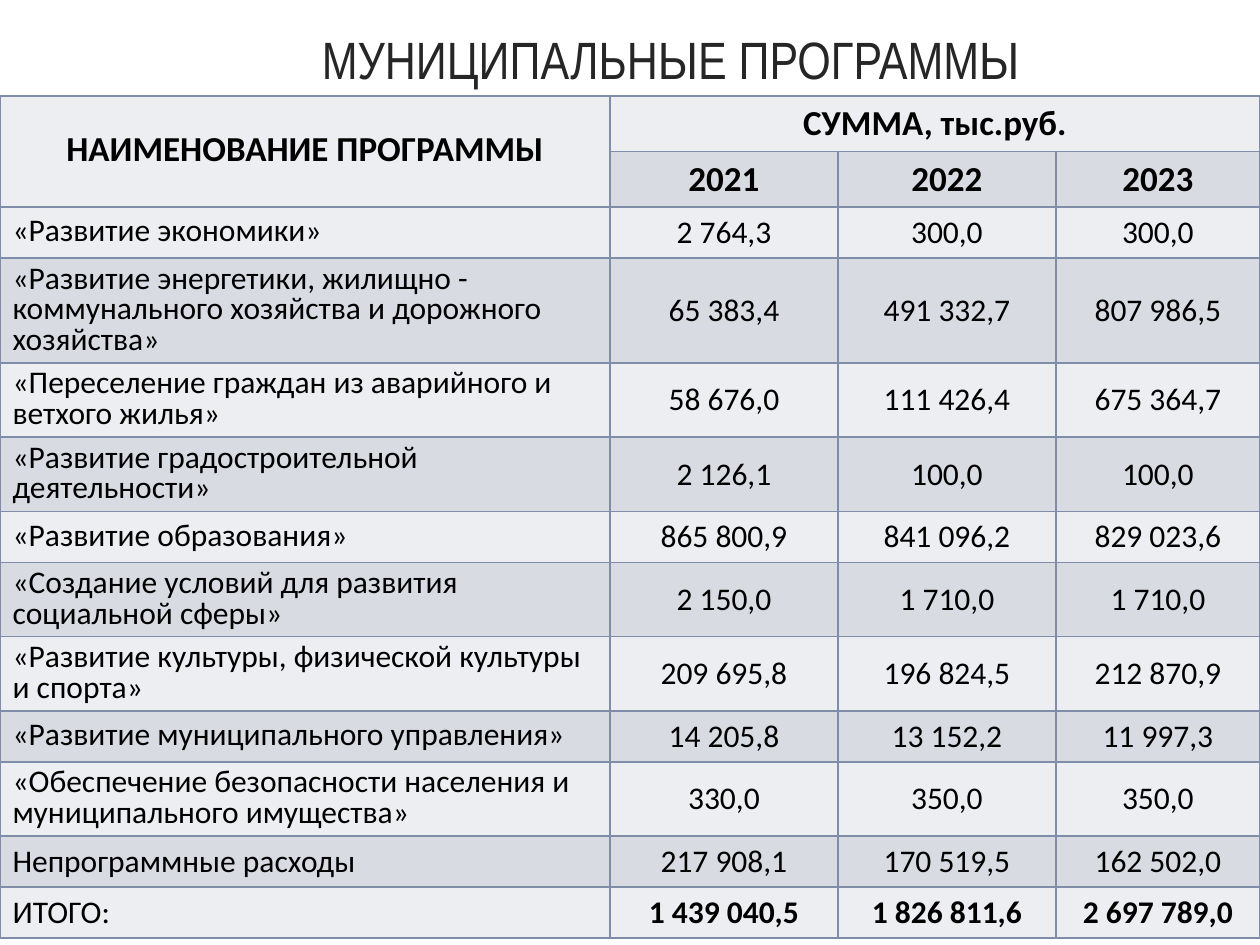
from lxml import etree
from pptx import Presentation
from pptx.dml.color import RGBColor
from pptx.enum.text import MSO_ANCHOR, MSO_AUTO_SIZE, PP_ALIGN
from pptx.oxml.ns import qn
from pptx.util import Pt

LEFT, CENTER = PP_ALIGN.LEFT, PP_ALIGN.CENTER
TOP, MIDDLE, BOTTOM = MSO_ANCHOR.TOP, MSO_ANCHOR.MIDDLE, MSO_ANCHOR.BOTTOM
NO_FIT = MSO_AUTO_SIZE.NONE

SCALE = 914400 // 126
COLS = [610, 228, 218, 204]
HEAD = 55
HEIGHTS = {1: 51, 2: 74, 3: 104}  # row height by lines of text
YEARS = ["2021", "2022", "2023"]
# lines of text, name, sums by year
ROWS = [
    (1, "«Развитие экономики»", "2 764,3", "300,0", "300,0"),
    (3, "«Развитие энергетики, жилищно - коммунального хозяйства и дорожного хозяйства»",
     "65 383,4", "491 332,7", "807 986,5"),
    (2, "«Переселение граждан из аварийного и ветхого жилья»",
     "58 676,0", "111 426,4", "675 364,7"),
    (2, "«Развитие градостроительной деятельности»", "2 126,1", "100,0", "100,0"),
    (1, "«Развитие образования»", "865 800,9", "841 096,2", "829 023,6"),
    (2, "«Создание условий для развития социальной сферы»",
     "2 150,0", "1 710,0", "1 710,0"),
    (2, "«Развитие культуры, физической культуры и спорта»",
     "209 695,8", "196 824,5", "212 870,9"),
    (1, "«Развитие муниципального управления»", "14 205,8", "13 152,2", "11 997,3"),
    (2, "«Обеспечение безопасности населения и муниципального имущества»",
     "330,0", "350,0", "350,0"),
    (1, "Непрограммные расходы", "217 908,1", "170 519,5", "162 502,0"),
    (1, "ИТОГО:", "1 439 040,5", "1 826 811,6", "2 697 789,0"),
]


def px(n):
    return n * SCALE


def color(code):
    return RGBColor.from_string(code)


def write(frame, text, size=18, font="Calibri", ink="000000", bold=False,
          align=CENTER, space=None):
    para = frame.paragraphs[0]
    para.alignment = align
    if space:
        para.line_spacing = space
    run = para.add_run()
    run.text = text
    run.font.size = Pt(size)
    run.font.name = font
    run.font.bold = bold
    run.font.color.rgb = color(ink)


def border(cell, code, width):
    props = cell._tc.get_or_add_tcPr()
    for side in ("a:lnL", "a:lnR", "a:lnT", "a:lnB"):
        line = etree.SubElement(props, qn(side), w=str(Pt(width)))
        fill = etree.SubElement(line, qn("a:solidFill"))
        etree.SubElement(fill, qn("a:srgbClr"), val=code)


class Deck:
    bands = ("EDEEF1", "D8DBE2")
    edge = "808DA9"

    def __init__(self, wide, high):
        self.show = Presentation()
        self.show.slide_width, self.show.slide_height = px(wide), px(high)
        self.slide = self.show.slides.add_slide(self.show.slide_layouts[5])

    def title(self, text, x, y, w, h):
        box = self.slide.shapes.title
        box.left, box.top, box.width, box.height = map(px, (x, y, w, h))
        frame = box.text_frame
        frame.auto_size = NO_FIT
        frame.vertical_anchor = BOTTOM
        write(frame, text, size=30, font="Arial Narrow", ink="262626")

    def table(self, x, y, cols, rows):
        """Add an empty banded grid with the given column and row sizes."""
        grid = self.slide.shapes.add_table(
            len(rows), len(cols), px(x), px(y), px(sum(cols)), px(sum(rows))).table
        for col, wide in zip(grid.columns, cols):
            col.width = px(wide)
        for i, (row, high) in enumerate(zip(grid.rows, rows)):
            row.height = px(high)
            for cell in row.cells:
                border(cell, self.edge, 1)
                cell.fill.solid()
                cell.fill.fore_color.rgb = color(self.bands[i % 2])
        return grid

    def cell(self, cell, text, anchor=MIDDLE, **style):
        cell.vertical_anchor = anchor
        write(cell.text_frame, text, **style)


def main():
    deck = Deck(1260, 945)
    deck.title("МУНИЦИПАЛЬНЫЕ ПРОГРАММЫ ", 94, 0, 1166, 96)
    sizes = [HEAD, HEAD] + [HEIGHTS[row[0]] for row in ROWS]
    grid = deck.table(0, 96, COLS, sizes)

    head = {"size": 20, "bold": True}
    grid.cell(0, 0).merge(grid.cell(1, 0))
    grid.cell(0, 1).merge(grid.cell(0, 3))
    deck.cell(grid.cell(0, 0), "НАИМЕНОВАНИЕ ПРОГРАММЫ", space=0.8, **head)
    deck.cell(grid.cell(0, 1), "СУММА, тыс.руб.", TOP, **head)
    for c, year in enumerate(YEARS, 1):
        deck.cell(grid.cell(1, c), year, TOP, **head)

    for r, (_, name, *sums) in enumerate(ROWS, 2):
        if name.startswith("«"):
            deck.cell(grid.cell(r, 0), name, align=LEFT, space=0.8)
        else:
            deck.cell(grid.cell(r, 0), name, TOP, align=LEFT)
        for c, value in enumerate(sums, 1):
            deck.cell(grid.cell(r, c), value, bold=name == "ИТОГО:")

    deck.show.save("out.pptx")


if __name__ == "__main__":
    main()
